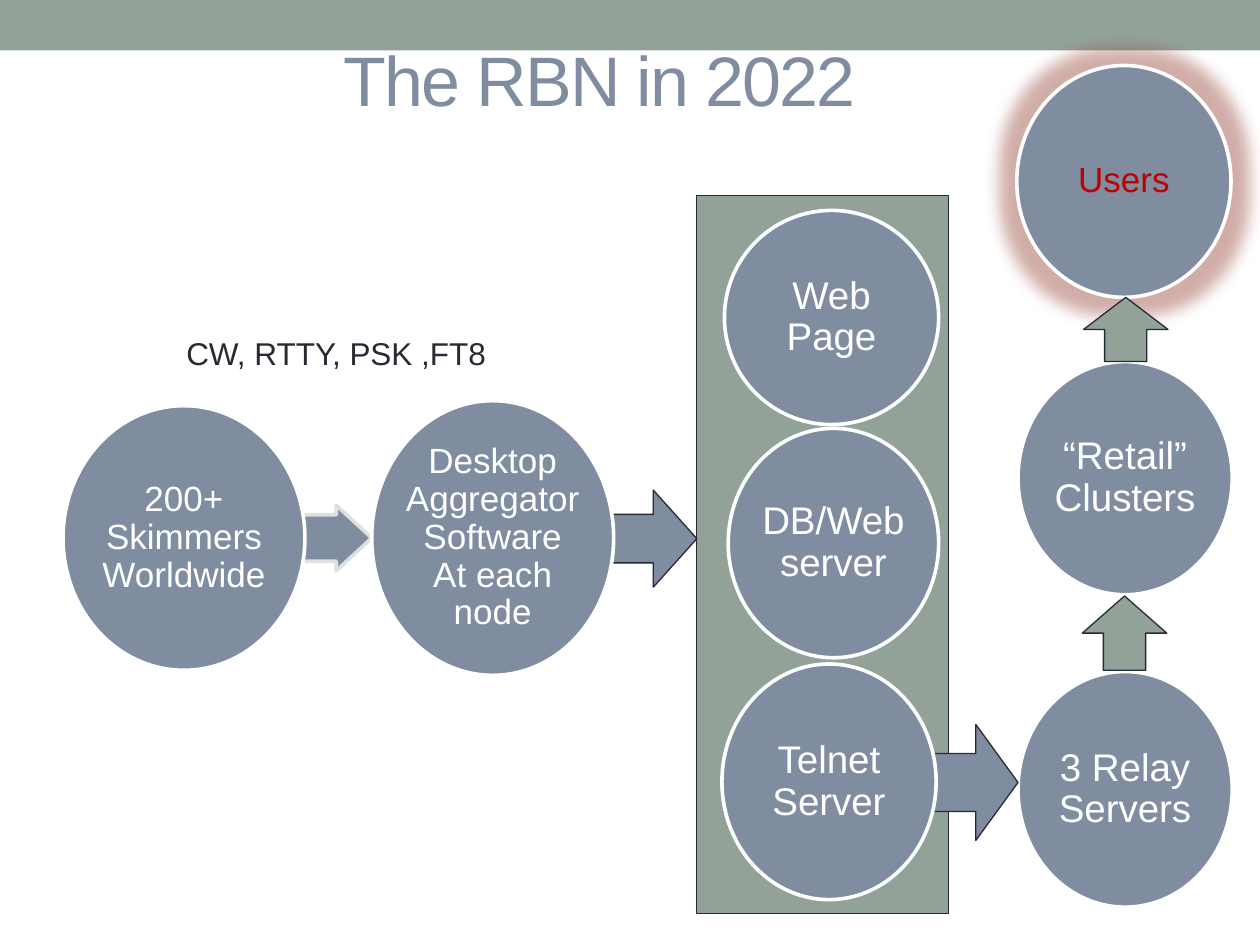
from dataclasses import dataclass
from typing import Optional

import pptx
import pptx.dml.color
import pptx.enum.shapes
import pptx.enum.text
import pptx.oxml
import pptx.oxml.ns
import pptx.util

Inches = pptx.util.Inches
Pt = pptx.util.Pt
Kind = pptx.enum.shapes.MSO_SHAPE
Align = pptx.enum.text.PP_ALIGN
Anchor = pptx.enum.text.MSO_ANCHOR


@dataclass(frozen=True)
class Theme:
    font: str = "Arial"
    sage: str = "93A299"
    slate: str = "808DA0"
    ink: str = "292934"
    white: str = "FFFFFF"
    pale: str = "DCE0DE"
    red: str = "C00000"
    glow: str = "8E3427"
    title: float = 40
    large: float = 22
    medium: float = 20
    label: float = 18
    thin: float = 0.75
    thick: float = 2.08


THEME = Theme()
CIRCLE_TEXT_INSET = 0.26
ELLIPSE_INSET_RATIO = 0.1464  # built-in text inset of an ellipse


@dataclass(frozen=True)
class Block:
    kind: Kind
    left: float
    top: float
    width: float
    height: float
    fill: str
    line: Optional[str] = THEME.ink
    weight: float = THEME.thin


@dataclass(frozen=True)
class Stage:
    text: str
    left: float
    top: float
    width: float
    height: float
    size: float = THEME.large
    color: str = THEME.white


def rgb(color: str):
    return pptx.dml.color.RGBColor.from_string(color)


def write_text(shape, text: str, *, size: float, color: str, align=Align.LEFT,
               anchor=Anchor.TOP, line_spacing: float = 1.0, wrap: bool = True):
    frame = shape.text_frame
    frame.word_wrap = wrap
    frame.vertical_anchor = anchor
    para = frame.paragraphs[0]
    para.alignment = align
    para.line_spacing = line_spacing
    span = para.add_run()
    span.text = text
    span.font.name = THEME.font
    span.font.size = Pt(size)
    span.font.color.rgb = rgb(color)
    return span


def draw_block(page, block: Block):
    shape = page.shapes.add_shape(block.kind, Inches(block.left), Inches(block.top),
                                  Inches(block.width), Inches(block.height))
    shape.shadow.inherit = False
    shape.fill.solid()
    shape.fill.fore_color.rgb = rgb(block.fill)
    if block.line:
        shape.line.color.rgb = rgb(block.line)
        shape.line.width = Pt(block.weight)
    else:
        shape.line.fill.background()
    return shape


def draw_stage(page, stage: Stage):
    shape = draw_block(page, Block(Kind.OVAL, stage.left, stage.top, stage.width,
                                   stage.height, THEME.slate, THEME.white, THEME.thick))
    frame = shape.text_frame
    across = Inches(CIRCLE_TEXT_INSET - ELLIPSE_INSET_RATIO * stage.width)
    frame.margin_left = frame.margin_right = across
    frame.margin_top = frame.margin_bottom = 0
    write_text(shape, stage.text, size=stage.size, color=stage.color, align=Align.CENTER,
               anchor=Anchor.MIDDLE, line_spacing=0.9)
    return shape


def add_glow(shape, color: str, radius: int, opacity: int) -> None:
    effects = shape._element.spPr.find(pptx.oxml.ns.qn("a:effectLst"))
    effects.append(pptx.oxml.parse_xml(
        f'<a:glow {pptx.oxml.ns.nsdecls("a")} rad="{radius}"><a:srgbClr val="{color}">'
        f'<a:alpha val="{opacity * 1000}"/></a:srgbClr></a:glow>'))


def add_text_box(page, left: float, top: float, width: float, height: float):
    return page.shapes.add_textbox(Inches(left), Inches(top), Inches(width), Inches(height))


def main() -> None:
    deck = pptx.Presentation()
    deck.slide_width, deck.slide_height = Inches(10), Inches(7.5)
    page = deck.slides.add_slide(deck.slide_layouts[6])

    # Top band, server panel and the arrow into it
    draw_block(page, Block(Kind.RECTANGLE, 0, 0, 10, 0.4, THEME.sage, None))
    draw_block(page, Block(Kind.RECTANGLE, 5.53, 1.55, 2, 5.7, THEME.sage))
    draw_block(page, Block(Kind.RIGHT_ARROW, 4.84, 3.89, 0.69, 0.77, THEME.slate))

    # Title
    title = add_text_box(page, 0.26, 0.08, 9, 1.08)
    span = write_text(title, "The RBN in 2022", size=THEME.title, color=THEME.slate,
                      align=Align.CENTER, anchor=Anchor.MIDDLE)
    span.font._element.set("spc", "-100")

    # Arrow from skimmers to aggregator
    feed = draw_block(page, Block(Kind.RIGHT_ARROW, 2.3, 4.01, 0.65, 0.52,
                                  THEME.slate, THEME.pale, THEME.thick))
    feed.adjustments[0], feed.adjustments[1] = 0.71, 0.54

    # Stages of the network
    for stage in (
        Stage("DB/Web server", 5.78, 3.4, 1.67, 1.82),
        Stage("200+ Skimmers Worldwide", 0.5, 3.22, 1.92, 2.1, THEME.medium),
        Stage("3 Relay Servers", 8.08, 5.33, 1.7, 1.87),
    ):
        draw_stage(page, stage)
    users = draw_stage(page, Stage("Users", 8.07, 0.52, 1.7, 1.84, THEME.medium, THEME.red))
    add_glow(users, THEME.glow, Pt(18), 40)
    for stage in (
        Stage("“Retail” Clusters", 8.08, 2.87, 1.7, 1.85),
        Stage("Web Page", 5.75, 1.67, 1.7, 1.7),
        Stage("Desktop Aggregator Software At each node", 2.95, 3.18, 1.92, 2.18, THEME.medium),
    ):
        draw_stage(page, stage)

    # Telnet server sits over the start of its arrow
    draw_block(page, Block(Kind.RIGHT_ARROW, 7.41, 5.75, 0.67, 0.92, THEME.slate))
    draw_stage(page, Stage("Telnet Server", 5.73, 5.27, 1.7, 1.87))

    # Arrows up to the users
    draw_block(page, Block(Kind.UP_ARROW, 8.6, 2.36, 0.67, 0.51, THEME.sage))
    draw_block(page, Block(Kind.UP_ARROW, 8.59, 4.73, 0.67, 0.59, THEME.sage))

    # Signal modes
    modes = add_text_box(page, 1.38, 2.6, 2.62, 0.4)
    write_text(modes, "CW, RTTY, PSK ,FT8", size=THEME.label, color=THEME.ink, wrap=False)

    deck.save("out.pptx")


if __name__ == "__main__":
    main()
